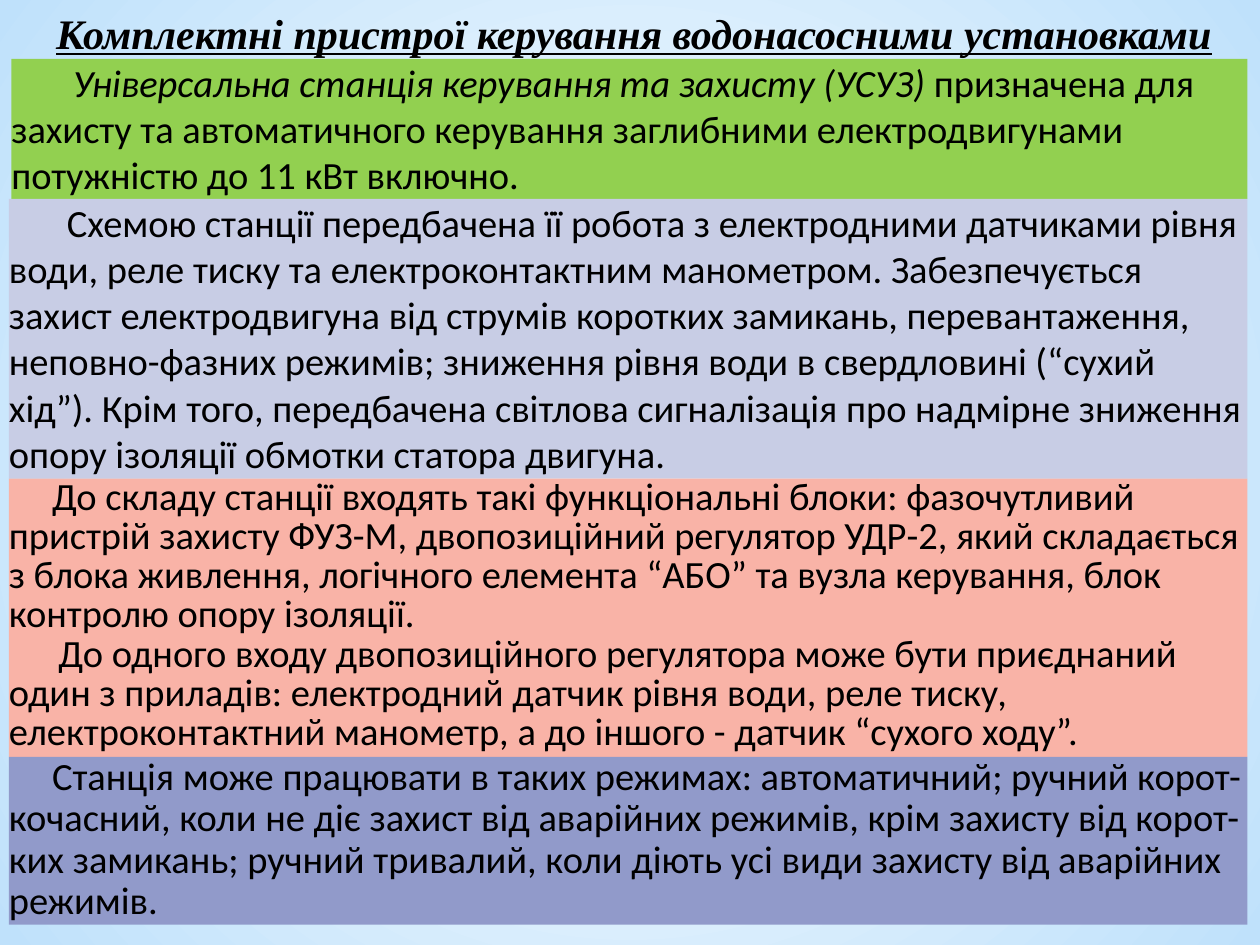
"""Build a slide about control stations for water pumping units."""
from lxml.etree import SubElement
from pptx import Presentation
from pptx.dml.color import RGBColor
from pptx.enum.shapes import MSO_SHAPE
from pptx.enum.text import MSO_ANCHOR, PP_ALIGN
from pptx.oxml.ns import qn
from pptx.util import Cm, Pt

RECTANGLE = MSO_SHAPE.RECTANGLE
TOP = MSO_ANCHOR.TOP
LEFT, CENTER = PP_ALIGN.LEFT, PP_ALIGN.CENTER

TITLE = "Комплектні пристрої керування водонасосними установками"
RIGHT_EDGE = 25.15
BLOCKS_TOP = 1.19
BLOCKS = [
    {"left": 0.23, "height": 2.82, "fill": "92D050", "spacing": 1.0, "paragraphs": [
        (1.24, [("Універсальна станція керування та захисту (УСУЗ) ", True),
                ("призначена для захисту та автоматичного керування заглибними "
                 "електродвигунами потужністю до 11 кВт включно.", False)])]},
    {"left": 0.18, "height": 5.64, "fill": "C8CDE5", "spacing": 1.0, "paragraphs": [
        (1.17, [("Схемою станції передбачена її робота з електродними датчиками рівня "
                 "води, реле тиску та електроконтактним манометром. Забезпечується "
                 "захист електродвигуна від струмів коротких замикань, перевантаження, "
                 "неповно-фазних режимів; зниження рівня води в свердловині (“сухий "
                 "хід”). Крім того, передбачена світлова сигналізація про надмірне "
                 "зниження опору ізоляції обмотки статора двигуна.", False)])]},
    {"left": 0.18, "height": 5.61, "fill": "F9B3A7", "spacing": 0.85, "paragraphs": [
        (0.87, [("До складу станції входять такі функціональні блоки: фазочутливий "
                 "пристрій захисту ФУЗ-М, двопозиційний регулятор УДР-2, який складається "
                 "з блока живлення, логічного елемента “АБО” та вузла керування, блок "
                 "контролю опору ізоляції.", False)]),
        (1.0, [("До одного входу двопозиційного регулятора може бути приєднаний один з "
                "приладів: електродний датчик рівня води, реле тиску, електроконтактний "
                "манометр, а до іншого - датчик “сухого ходу”.", False)])]},
    {"left": 0.18, "height": 3.38, "fill": "919ACA", "spacing": 0.9, "paragraphs": [
        (0.87, [("Станція може працювати в таких режимах: автоматичний; ручний "
                 "корот-кочасний, коли не діє захист від аварійних режимів, крім захисту "
                 "від корот-ких замикань; ручний тривалий, коли діють усі види захисту "
                 "від аварійних режимів.", False)])]},
]


def color(value):
    return RGBColor.from_string(value)


def prepare_frame(frame):
    frame.margin_left = frame.margin_right = frame.margin_top = frame.margin_bottom = 0
    frame.vertical_anchor = TOP
    frame.word_wrap = True


def add_run(paragraph, text, font_name, size, italic):
    run = paragraph.add_run()
    run.text = text
    run.font.name = font_name
    run.font.size = Pt(size)
    run.font.italic = italic
    run.font.color.rgb = color("000000")
    return run


def set_background(slide):
    fill = slide.background.fill
    fill.gradient()
    for stop, value in zip(fill.gradient_stops, ("FFFFFF", "BFE1FB")):
        stop.color.rgb = color(value)
    gradient = slide.element.find(".//" + qn("a:gradFill"))
    gradient.remove(gradient.find(qn("a:lin")))
    circle = SubElement(gradient, qn("a:path"), {"path": "circle"})
    SubElement(circle, qn("a:fillToRect"), dict.fromkeys("ltrb", "50000"))


def add_title(slide):
    title = slide.shapes.title
    title.left, title.top, title.width, title.height = Cm(0.41), Cm(0.15), Cm(24.74), Cm(1.02)
    prepare_frame(title.text_frame)
    paragraph = title.text_frame.paragraphs[0]
    paragraph.alignment = CENTER
    paragraph.line_spacing = 1.0
    run = add_run(paragraph, TITLE, "Times New Roman", 24, True)
    run.font.bold = run.font.underline = True


def add_block(slide, block, top):
    left = block["left"]
    shape = slide.shapes.add_shape(
        RECTANGLE, Cm(left), Cm(top), Cm(RIGHT_EDGE - left), Cm(block["height"]))
    shape.shadow.inherit = False
    shape.fill.solid()
    shape.fill.fore_color.rgb = color(block["fill"])
    shape.line.fill.background()
    frame = shape.text_frame
    prepare_frame(frame)
    for index, (indent, runs) in enumerate(block["paragraphs"]):
        paragraph = frame.add_paragraph() if index else frame.paragraphs[0]
        paragraph.alignment = LEFT
        paragraph.line_spacing = block["spacing"]
        paragraph._p.get_or_add_pPr().set("indent", str(Cm(indent)))
        for text, italic in runs:
            add_run(paragraph, text, "Calibri", 22, italic)


def main():
    presentation = Presentation()
    presentation.slide_width, presentation.slide_height = Cm(25.4), Cm(19.05)
    slide = presentation.slides.add_slide(presentation.slide_layouts[5])
    set_background(slide)
    add_title(slide)
    top = BLOCKS_TOP
    for block in BLOCKS:
        add_block(slide, block, top)
        top += block["height"]
    presentation.save("out.pptx")


if __name__ == "__main__":
    main()
